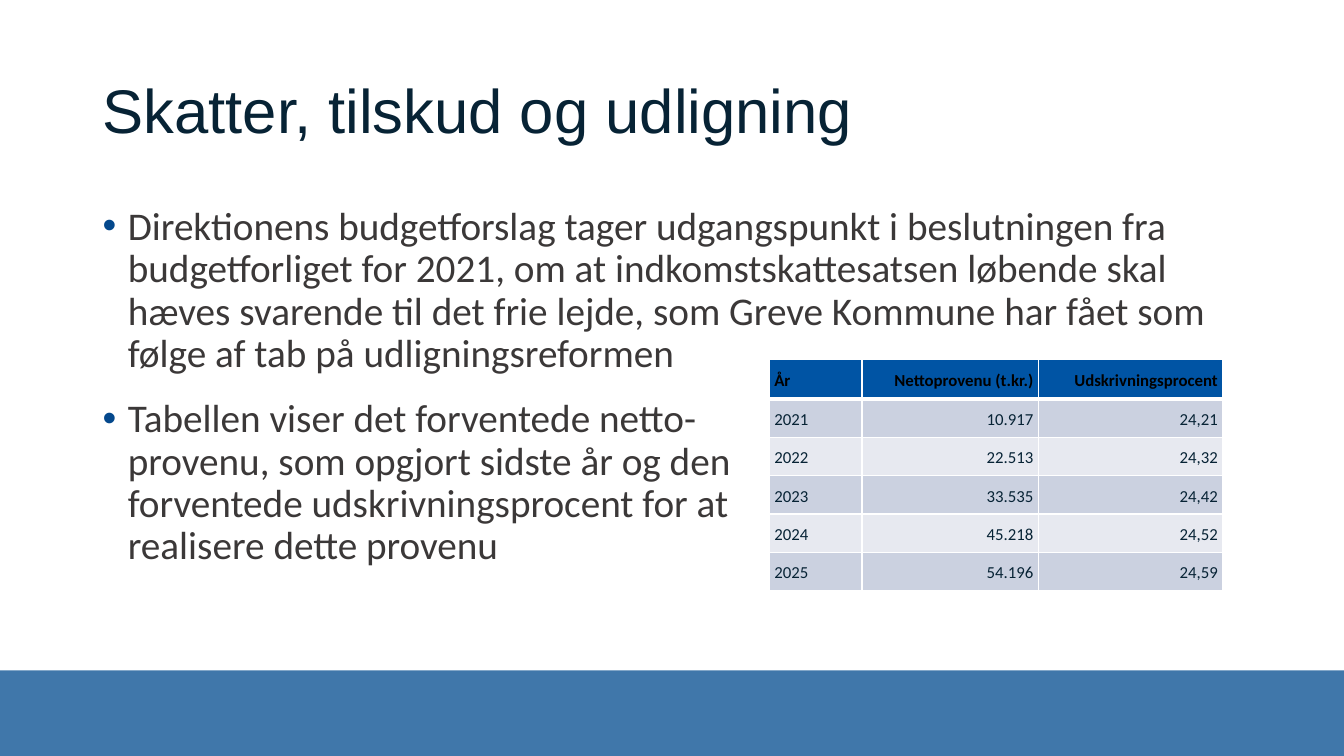
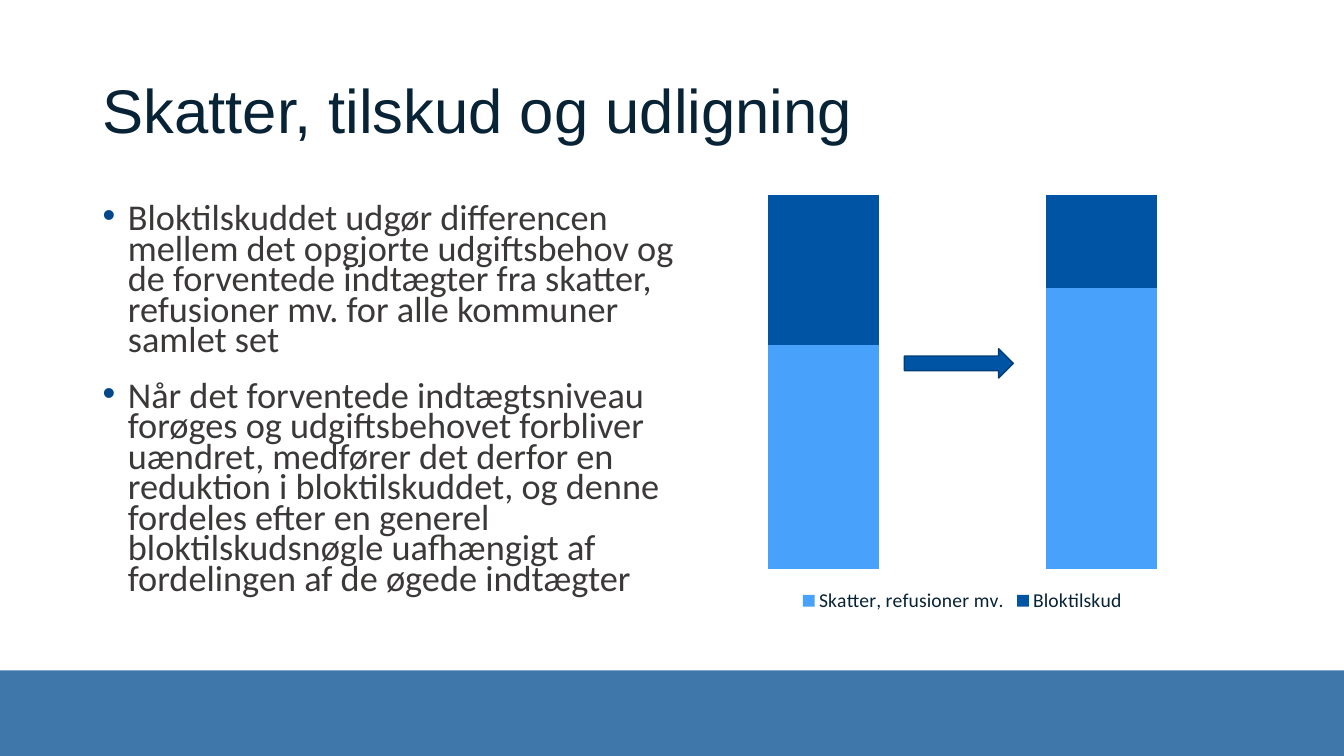
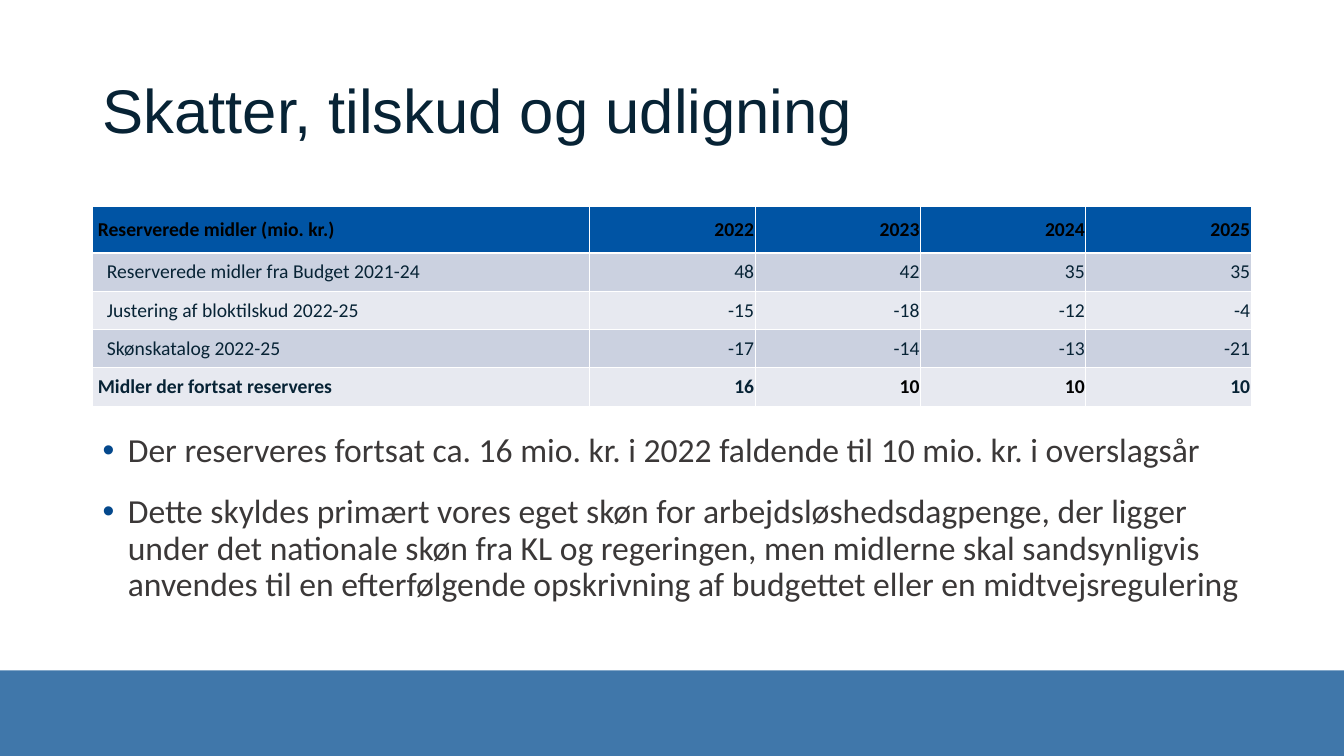
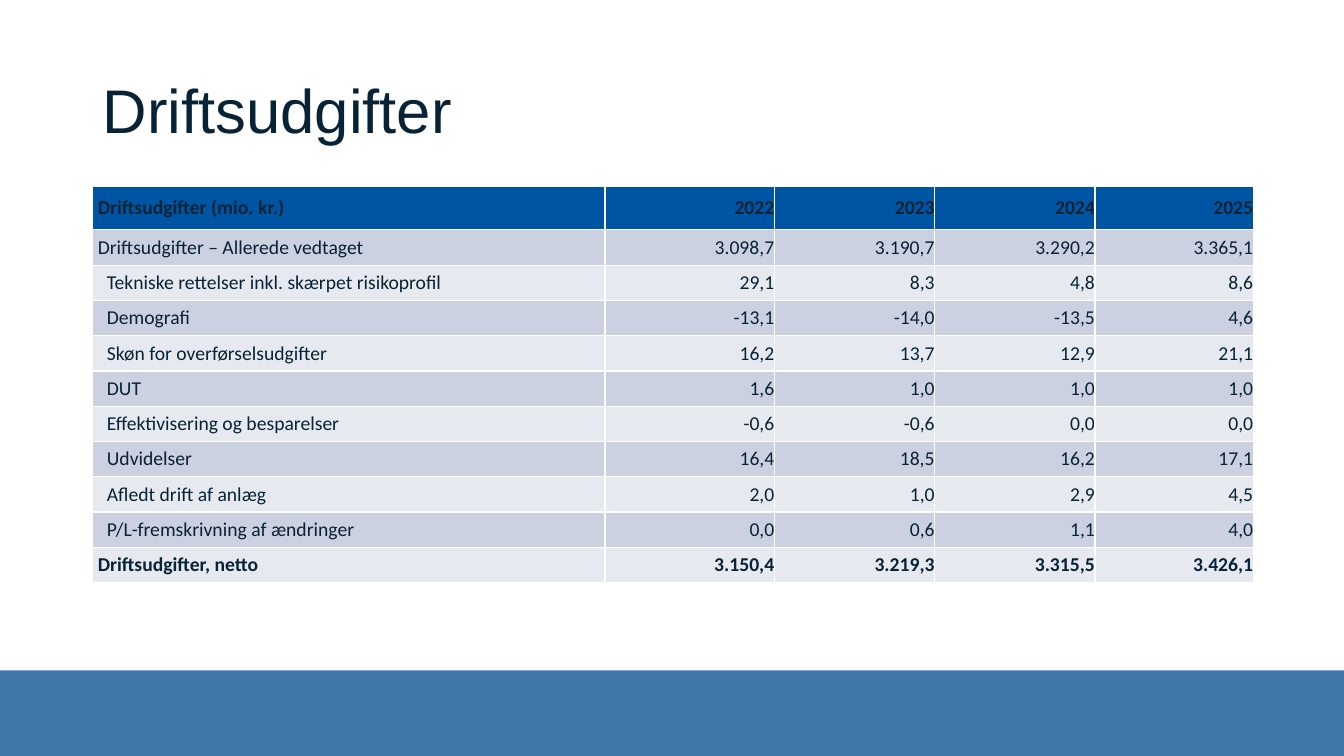
"""Build four budget slides with bullets, tables and a stacked chart."""
import lxml.etree
import pptx
import pptx.chart.data
import pptx.dml.color
import pptx.enum.chart
import pptx.enum.shapes
import pptx.enum.text
import pptx.oxml.ns
import pptx.util

Inches = pptx.util.Inches
Pt = pptx.util.Pt
qn = pptx.oxml.ns.qn
ALIGN = pptx.enum.text.PP_ALIGN
ANCHOR = pptx.enum.text.MSO_ANCHOR
SHAPE = pptx.enum.shapes.MSO_SHAPE
CHART = pptx.enum.chart

COLORS = {
    "ink": "072335", "gray": "3B3838", "black": "000000", "white": "FFFFFF",
    "band": "004A8E", "bullet": "04488C", "blue": "0054A4", "sky": "48A1FA",
    "edge": "003E79", "dark": "CBD1E0", "light": "E7E9F0",
}
LEFT, WIDTH = 0.92, 11.5
YEARS = ("2022", "2023", "2024", "2025")
TAXES = "Skatter, tilskud og udligning"


def color(name):
    return pptx.dml.color.RGBColor.from_string(COLORS[name])


def paint(shape, name):
    shape.fill.solid()
    shape.fill.fore_color.rgb = color(name)


def add(parent, tag, **values):
    node = lxml.etree.SubElement(parent, qn(tag))
    for key, value in values.items():
        node.set(key, str(value))
    return node


def bullet(para):
    props = para._p.get_or_add_pPr()
    props.set("marL", str(Inches(0.25)))
    props.set("indent", str(-Inches(0.25)))
    add(add(props, "a:buClr"), "a:srgbClr", val=COLORS["bullet"])
    add(props, "a:buFont", typeface="Arial")
    add(props, "a:buChar", char="•")


def write(frame, *lines, size=14, face="Calibri", ink="ink", bold=False,
          align=ALIGN.LEFT, space=1.0, after=0, dots=False):
    for at, line in enumerate(lines):
        para = frame.add_paragraph() if at else frame.paragraphs[0]
        if dots:
            bullet(para)
        para.alignment = align
        para.line_spacing = space
        para.space_after = Pt(after)
        run = para.add_run()
        run.text = line
        run.font.size = Pt(size)
        run.font.name = face
        run.font.bold = bold
        run.font.color.rgb = color(ink)


def place(slide, box, *lines, anchor=ANCHOR.TOP, **style):
    frame = slide.shapes.add_textbox(*map(Inches, box)).text_frame
    frame.word_wrap = True
    frame.vertical_anchor = anchor
    write(frame, *lines, **style)


def points(slide, box, *lines, size=28, space=0.9):
    place(slide, box, *lines, size=size, space=space, ink="gray", after=18, dots=True)


def block(slide, kind, box, fill):
    shape = slide.shapes.add_shape(kind, *map(Inches, box))
    shape.shadow.inherit = False
    paint(shape, fill)
    shape.line.fill.background()
    return shape


def page(deck, title):
    slide = deck.slides.add_slide(deck.slide_layouts[6])
    band = block(slide, SHAPE.RECTANGLE, (0, 6.65, 13.33, 0.85), "band")
    add(band._element.spPr.find(qn("a:solidFill"))[0], "a:alpha", val=75000)
    place(slide, (LEFT, 0.4, WIDTH, 1.45), title,
          anchor=ANCHOR.MIDDLE, size=44, face="Arial", space=0.9)
    return slide


def border(cell, top, base):
    props = cell._tc.get_or_add_tcPr()
    for side, width in (("L", 1), ("R", 1), ("T", top), ("B", base)):
        line = add(props, "a:ln" + side, w=Pt(width))
        add(add(line, "a:solidFill"), "a:srgbClr", val=COLORS["white"])


def grid(slide, at, cols, rows, head, body, size=14, pad=0, space=1.0, rule=1,
         ink="ink", deep=(), total=False, black=()):
    tall = [head] + [body] * (len(rows) - 1)
    box = (*at, sum(cols), sum(tall))
    table = slide.shapes.add_table(len(rows), len(cols), *map(Inches, box)).table
    table.horz_banding = False
    for col, width in zip(table.columns, cols):
        col.width = Inches(width)
    for r, row in enumerate(rows):
        table.rows[r].height = Inches(tall[r])
        bold = r == 0 or (total and r == len(rows) - 1)
        for c, value in enumerate(row):
            cell = table.cell(r, c)
            border(cell, rule if r == 1 else 1, rule if r == 0 else 1)
            paint(cell, "blue" if r == 0 else "dark" if r % 2 else "light")
            cell.vertical_anchor = ANCHOR.MIDDLE
            cell.margin_left = Inches(0.14 if c == 0 and r in deep else 0.05)
            cell.margin_right = Inches(pad)
            cell.margin_top = cell.margin_bottom = 0
            tone = ink if r == 0 else "black" if (r, c) in black else "ink"
            write(cell.text_frame, value, size=size, ink=tone, bold=bold, space=space,
                  align=ALIGN.RIGHT if c else ALIGN.LEFT)


def stack(slide, box, cats, series):
    data = pptx.chart.data.CategoryChartData()
    data.categories = cats
    for name, values, _ in series:
        data.add_series(name, values)
    chart = slide.shapes.add_chart(
        CHART.XL_CHART_TYPE.COLUMN_STACKED_100, *map(Inches, box), data).chart
    chart.has_title = False
    chart.has_legend = True
    chart.legend.position = CHART.XL_LEGEND_POSITION.BOTTOM
    chart.legend.include_in_layout = False
    for font, size in ((chart.font, 10), (chart.legend.font, 14)):
        font.size = Pt(size)
        font.name = "Calibri"
        font.color.rgb = color("ink")
    chart.value_axis.has_major_gridlines = False
    chart.value_axis.major_unit = 0.2
    chart.value_axis.visible = False
    chart.category_axis.visible = False
    plot = chart.plots[0]
    plot.vary_by_categories = False
    plot.gap_width = 150
    plot.overlap = 100
    for item, (_, _, fill) in zip(plot.series, series):
        paint(item.format, fill)


def rates(deck):
    slide = page(deck, TAXES)
    points(slide, (LEFT, 2, WIDTH, 1.91),
           "Direktionens budgetforslag tager udgangspunkt i beslutningen fra "
           "budgetforliget for 2021, om at indkomstskattesatsen løbende skal hæves "
           "svarende til det frie lejde, som Greve Kommune har fået som følge af tab "
           "på udligningsreformen")
    grid(slide, (7.63, 3.57), (0.92, 1.75, 1.83), [
        ("År", "Nettoprovenu (t.kr.)", "Udskrivningsprocent"),
        ("2021", "10.917", "24,21"),
        ("2022", "22.513", "24,32"),
        ("2023", "33.535", "24,42"),
        ("2024", "45.218", "24,52"),
        ("2025", "54.196", "24,59"),
    ], 0.39, 0.38, size=12, pad=0.05, space=1.15, rule=3, ink="black")
    points(slide, (LEFT, 3.91, 6.43, 2.29),
           "Tabellen viser det forventede netto- provenu, som opgjort sidste år og "
           "den forventede udskrivningsprocent for at realisere dette provenu")


def grants(deck):
    slide = page(deck, TAXES)
    stack(slide, (6.67, 1.85, 5.75, 4.27), ("1", "2"), [
        ("Skatter, refusioner mv.", (60, 75), "sky"),
        ("Bloktilskud", (40, 25), "blue"),
    ])
    points(slide, (LEFT, 2, 5.99, 4.12),
           "Bloktilskuddet udgør differencen mellem det opgjorte udgiftsbehov og de "
           "forventede indtægter fra skatter, refusioner mv. for alle kommuner samlet set",
           "Når det forventede indtægtsniveau forøges og udgiftsbehovet forbliver "
           "uændret, medfører det derfor en reduktion i bloktilskuddet, og denne "
           "fordeles efter en generel bloktilskudsnøgle uafhængigt af fordelingen af "
           "de øgede indtægter", size=25.9, space=0.7)
    arrow = block(slide, SHAPE.RIGHT_ARROW, (8.97, 3.46, 1.08, 0.29), "blue")
    arrow.line.color.rgb = color("edge")
    arrow.line.width = Pt(1)


def funds(deck):
    slide = page(deck, TAXES)
    grid(slide, (LEFT, 2.05), (4.93,) + (1.64,) * 4, [
        ("Reserverede midler (mio. kr.)", *YEARS),
        ("Reserverede midler fra Budget 2021-24", "48", "42", "35", "35"),
        ("Justering af bloktilskud 2022-25", "-15", "-18", "-12", "-4"),
        ("Skønskatalog 2022-25", "-17", "-14", "-13", "-21"),
        ("Midler der fortsat reserveres", "16", "10", "10", "10"),
    ], 0.46, 0.38, pad=0.01, ink="black", deep=range(1, 4), total=True,
        black=((4, 2), (4, 3)))
    points(slide, (LEFT, 4.25, WIDTH, 1.96),
           "Der reserveres fortsat ca. 16 mio. kr. i 2022 faldende til 10 mio. kr. i "
           "overslagsår",
           "Dette skyldes primært vores eget skøn for arbejdsløshedsdagpenge, der "
           "ligger under det nationale skøn fra KL og regeringen, men midlerne skal "
           "sandsynligvis anvendes til en efterfølgende opskrivning af budgettet eller "
           "en midtvejsregulering", size=24)


def costs(deck):
    slide = page(deck, "Driftsudgifter")
    grid(slide, (LEFT, 1.85), (5.08, 1.68, 1.59, 1.59, 1.57), [
        ("Driftsudgifter (mio. kr.)", *YEARS),
        ("Driftsudgifter – Allerede vedtaget", "3.098,7", "3.190,7", "3.290,2", "3.365,1"),
        ("Tekniske rettelser inkl. skærpet risikoprofil", "29,1", "8,3", "4,8", "8,6"),
        ("Demografi", "-13,1", "-14,0", "-13,5", "4,6"),
        ("Skøn for overførselsudgifter", "16,2", "13,7", "12,9", "21,1"),
        ("DUT", "1,6", "1,0", "1,0", "1,0"),
        ("Effektivisering og besparelser", "-0,6", "-0,6", "0,0", "0,0"),
        ("Udvidelser", "16,4", "18,5", "16,2", "17,1"),
        ("Afledt drift af anlæg", "2,0", "1,0", "2,9", "4,5"),
        ("P/L-fremskrivning af ændringer", "0,0", "0,6", "1,1", "4,0"),
        ("Driftsudgifter, netto", "3.150,4", "3.219,3", "3.315,5", "3.426,1"),
    ], 0.43, 0.35, deep=range(2, 10), total=True)


def main():
    deck = pptx.Presentation()
    deck.slide_width = Inches(13.33)
    deck.slide_height = Inches(7.5)
    for build in (rates, grants, funds, costs):
        build(deck)
    deck.save("out.pptx")


if __name__ == "__main__":
    main()
